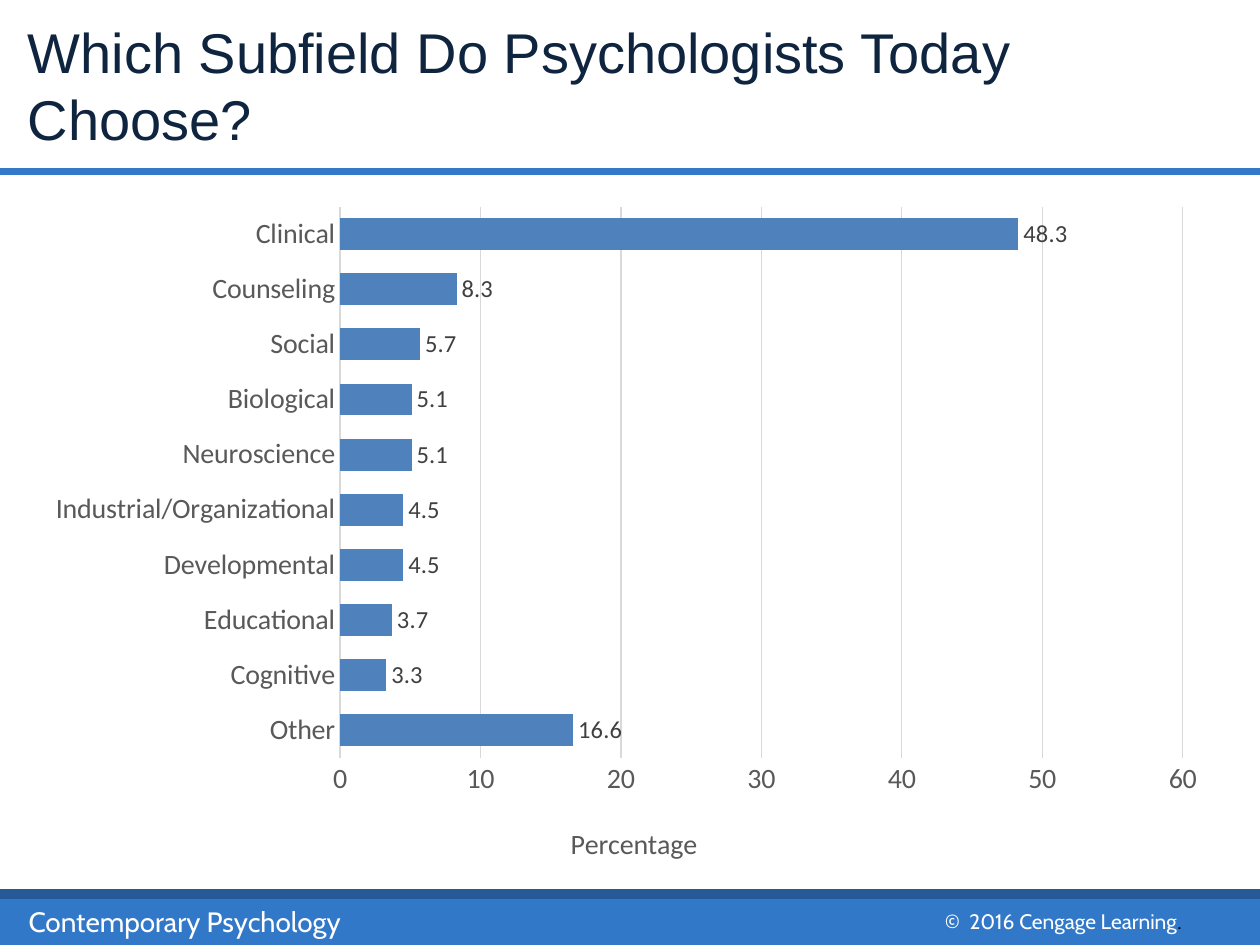
from lxml import etree
from pptx import Presentation
from pptx import util as u
from pptx.chart.data import CategoryChartData
from pptx.dml.color import RGBColor
from pptx.enum import chart as ch, shapes, text
from pptx.oxml import parse_xml
from pptx.oxml.ns import nsdecls

COLORS = {
    "title": "0F243E", "rule": "4F81BD", "rule_edge": "3478CA",
    "footer": "3278C8", "footer_edge": "255997", "white": "FFFFFF",
    "black": "000000", "bar": "4F81BD", "axis": "595959",
    "value": "404040", "grid": "D9D9D9",
}
SUBFIELDS = {
    "Clinical": 48.3, "Counseling": 8.3, "Social": 5.7, "Biological": 5.1,
    "Neuroscience": 5.1, "Industrial/Organizational": 4.5,
    "Developmental": 4.5, "Educational": 3.7, "Cognitive": 3.3, "Other": 16.6,
}


def rgb(name):
    """Return a palette colour."""
    return RGBColor.from_string(COLORS[name])


def style(font, face, size, color):
    """Set the face, point size and colour of a font."""
    font.name, font.size, font.bold = face, u.Pt(size), False
    font.color.rgb = rgb(color)


def add_run(paragraph, words, face, size, color):
    """Append one styled run."""
    run = paragraph.add_run()
    run.text = words
    style(run.font, face, size, color)


def indent(paragraph, margin, first):
    """Set the left margin and first-line indent."""
    props = paragraph._p.get_or_add_pPr()
    props.set("marL", str(u.Inches(margin)))
    props.set("indent", str(u.Inches(first)))


def add_band(slide, box, fill, edge=None):
    """Draw a horizontal band, with an optional edge."""
    band = slide.shapes.add_shape(
        shapes.MSO_SHAPE.RECTANGLE, *map(u.Inches, box))
    band.shadow.inherit = False
    band.fill.solid()
    band.fill.fore_color.rgb = rgb(fill)
    if edge:
        band.line.color.rgb = rgb(edge)
        band.line.width = u.Pt(2.25)
    else:
        band.line.fill.background()


def add_label(slide, box):
    """Add a wrapping text box and return its first paragraph."""
    label = slide.shapes.add_textbox(*map(u.Inches, box))
    label.text_frame.word_wrap = True
    return label.text_frame.paragraphs[0]


def add_heading(slide, box):
    """Place the title and the rule beneath it."""
    left, top, width, height = box
    title = slide.shapes.title
    title.left, title.top, title.width, title.height = map(u.Inches, box)
    frame = title.text_frame
    frame.auto_size = text.MSO_AUTO_SIZE.NONE
    frame.vertical_anchor = text.MSO_ANCHOR.MIDDLE
    heading = frame.paragraphs[0]
    heading.alignment = text.PP_ALIGN.LEFT
    indent(heading, 0.13, 0)
    add_run(heading, "Which Subfield Do Psychologists Today Choose?",
            "Arial", 32, "title")
    add_band(slide, (0, top + height + 0.01, 10, 0.02), "rule", "rule_edge")


def add_footer(slide, box):
    """Draw the footer band with the book title and copyright line."""
    left, top, width, height = box
    add_band(slide, box, "footer")
    add_band(slide, (left, top - 0.02, width, 0.05),
             "footer_edge", "footer_edge")
    book = add_label(slide, (left, top + 0.04, width / 2, 0.37))
    indent(book, 0, 0.13)
    add_run(book, "Contemporary Psychology", "Cabin", 16, "white")
    rights = add_label(slide, (left + width - 2.6, top + 0.07, 2.6, 0.3))
    add_run(rights, "©  2016 Cengage Learning", "Cabin", 12, "white")
    add_run(rights, ".", "Cabin", 12, "black")


def manual_layout(x, y, size=None, inner=False):
    """Build a chart layout from fractions of the chart box."""
    parts = [("xMode", "edge"), ("yMode", "edge"), ("x", x), ("y", y)]
    if inner:
        parts.insert(0, ("layoutTarget", "inner"))
    if size:
        parts += zip("wh", size)
    body = "".join(f'<c:{tag} val="{value}"/>' for tag, value in parts)
    return parse_xml(f'<c:layout {nsdecls("c")}><c:manualLayout>{body}'
                     '</c:manualLayout></c:layout>')


def place(parent, layout, index):
    """Put a layout in a chart part, replacing any existing one."""
    for old in parent.findall(layout.tag):
        parent.remove(old)
    parent.insert(index, layout)


def format_axes(chart):
    """Format both axes, the gridlines and the axis title."""
    categories, percentages = chart.category_axis, chart.value_axis
    for axis in (categories, percentages):
        axis.major_tick_mark = axis.minor_tick_mark = ch.XL_TICK_MARK.NONE
        style(axis.tick_labels.font, "Calibri", 16, "axis")
    percentages.minimum_scale, percentages.maximum_scale = 0, 60
    percentages.major_unit = 10
    percentages.format.line.fill.background()
    for line in (categories.format.line, percentages.major_gridlines.format.line):
        line.color.rgb = rgb("grid")
        line.width = u.Pt(0.75)
    caption = percentages.axis_title
    add_run(caption.text_frame.paragraphs[0], "Percentage",
            "Calibri", 16, "axis")
    place(caption._element, manual_layout(0.45, 0.91), 1)


def add_subfield_chart(slide, box):
    """Chart the share of psychologists in each subfield."""
    data = CategoryChartData(number_format="General")
    data.categories = list(reversed(SUBFIELDS))
    data.add_series("Series 1", list(reversed(SUBFIELDS.values())))
    chart = slide.shapes.add_chart(
        ch.XL_CHART_TYPE.BAR_CLUSTERED, *map(u.Inches, box), data).chart
    chart.has_legend = chart.has_title = False
    style(chart.font, "Calibri", 10, "black")
    format_axes(chart)
    plot = chart.plots[0]
    plot.gap_width, plot.vary_by_categories = 73, False
    bars = plot.series[0]
    bars.format.fill.solid()
    bars.format.fill.fore_color.rgb = rgb("bar")
    values = bars.data_labels
    values.show_value = True
    values.position = ch.XL_LABEL_POSITION.OUTSIDE_END
    style(values.font, "Calibri", 14, "value")
    plot_area = chart._chartSpace.chart.plotArea
    place(plot_area, manual_layout(0.26, 0.02, (0.71, 0.8), inner=True), 0)


def main():
    """Build and save the slide."""
    deck = Presentation()
    deck.slide_width, deck.slide_height = u.Inches(10), u.Inches(7.5)
    slide = deck.slides.add_slide(deck.slide_layouts[5])
    add_footer(slide, (0, 7.09, 10, 0.42))
    add_heading(slide, (-0.01, 0, 10, 1.34))
    add_subfield_chart(slide, (0.25, 1.53, 9.42, 5.47))
    deck.save("out.pptx")


if __name__ == "__main__":
    main()
